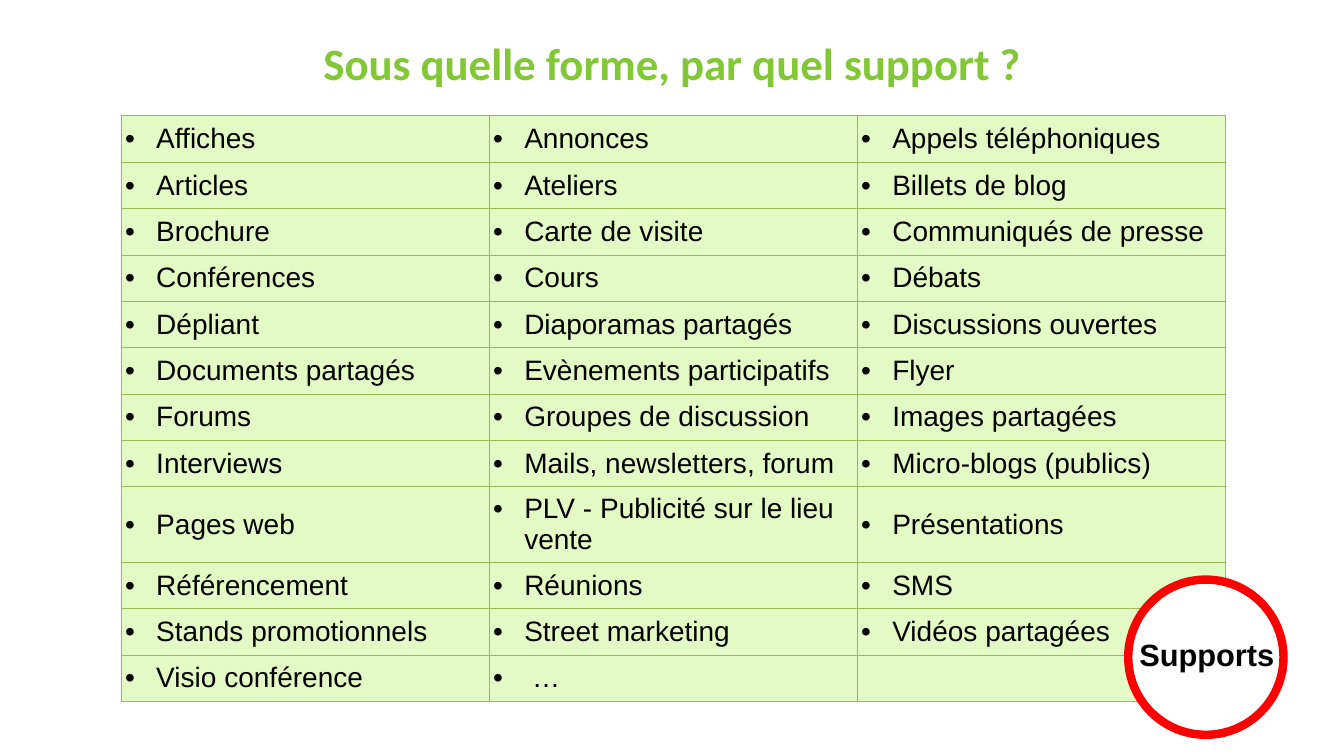
from lxml import etree
from pptx import Presentation
from pptx.dml.color import RGBColor
from pptx.enum import shapes, text
from pptx.oxml import ns
from pptx.util import Inches, Pt

# Content
TITLE = "Sous quelle forme, par quel support ?"
BADGE = "Supports"
SUPPORTS = [
    ("Affiches", "Annonces", "Appels téléphoniques"),
    ("Articles", "Ateliers", "Billets de blog"),
    ("Brochure", "Carte de visite", "Communiqués de presse"),
    ("Conférences", "Cours", "Débats"),
    ("Dépliant", "Diaporamas partagés", "Discussions ouvertes"),
    ("Documents partagés", "Evènements participatifs", "Flyer"),
    ("Forums", "Groupes de discussion", "Images partagées"),
    ("Interviews", "Mails, newsletters, forum", "Micro-blogs (publics)"),
    ("Pages web", "PLV - Publicité sur le lieu vente", "Présentations"),
    ("Référencement", "Réunions", "SMS"),
    ("Stands promotionnels", "Street marketing", "Vidéos partagées"),
    ("Visio conférence", " …", ""),
]

# Colours and sizes
GREEN = RGBColor(0x82, 0xC8, 0x36)
PALE_GREEN = RGBColor(0xE2, 0xFA, 0xC3)
BORDER_GREEN = RGBColor(0x98, 0xB9, 0x55)
RED = RGBColor(0xFF, 0x00, 0x00)
WHITE = RGBColor(0xFF, 0xFF, 0xFF)
BLACK = RGBColor(0x00, 0x00, 0x00)
COLUMN_WIDTH, ROW_HEIGHT, TALL_ROW_HEIGHT = 3.65, 0.46, 0.75
TALL_ROW = 8
INDENT = Inches(0.31)


def add_child(parent, tag, **attributes):
    return etree.SubElement(parent, ns.qn(tag), attributes)


def set_font(paragraph, name, size, color, bold=False):
    font = paragraph.font
    font.name, font.size, font.bold = name, Pt(size), bold
    font.color.rgb = color


def add_label(slide, box, words, name, size, color, wrap):
    shape = slide.shapes.add_textbox(*map(Inches, box))
    frame = shape.text_frame
    frame.word_wrap = wrap
    frame.vertical_anchor = text.MSO_ANCHOR.MIDDLE
    paragraph = frame.paragraphs[0]
    paragraph.text = words
    paragraph.alignment = text.PP_ALIGN.CENTER
    set_font(paragraph, name, size, color, bold=True)


def add_borders(cell):
    properties = cell._tc.get_or_add_tcPr()
    for side in ("a:lnL", "a:lnR", "a:lnT", "a:lnB"):
        line = add_child(properties, side, w=str(Pt(0.75)))
        fill = add_child(line, "a:solidFill")
        add_child(fill, "a:srgbClr", val=str(BORDER_GREEN))


def fill_cell(cell, words):
    add_borders(cell)
    cell.fill.solid()
    cell.fill.fore_color.rgb = PALE_GREEN
    cell.vertical_anchor = text.MSO_ANCHOR.MIDDLE
    cell.margin_left = Inches(0.04)
    cell.margin_right = cell.margin_top = cell.margin_bottom = Inches(0.01)
    paragraph = cell.text_frame.paragraphs[0]
    if words:
        paragraph.text = words
        properties = paragraph._p.get_or_add_pPr()
        properties.set("marL", str(INDENT))
        properties.set("indent", str(-INDENT))
        add_child(properties, "a:buFont", typeface="Arial")
        add_child(properties, "a:buChar", char="•")
    set_font(paragraph, "Arial", 20, BLACK)


def add_supports_table(slide):
    heights = [TALL_ROW_HEIGHT if i == TALL_ROW else ROW_HEIGHT
               for i in range(len(SUPPORTS))]
    columns = len(SUPPORTS[0])
    table = slide.shapes.add_table(
        len(SUPPORTS), columns, Inches(1.2), Inches(1.15),
        Inches(columns * COLUMN_WIDTH), Inches(sum(heights))).table
    table.first_row = table.horz_banding = False
    for column in table.columns:
        column.width = Inches(COLUMN_WIDTH)
    for row, height, entries in zip(table.rows, heights, SUPPORTS):
        row.height = Inches(height)
        for cell, words in zip(row.cells, entries):
            fill_cell(cell, words)


def add_badge(slide):
    circle = slide.shapes.add_shape(
        shapes.MSO_SHAPE.OVAL, Inches(11.19), Inches(5.75), Inches(1.54), Inches(1.54))
    circle.shadow.inherit = False
    circle.fill.solid()
    circle.fill.fore_color.rgb = WHITE
    circle.line.color.rgb = RED
    circle.line.width = Pt(6)
    add_label(slide, (11.19, 6.26, 1.56, 0.47), BADGE, "Arial", 22, BLACK, wrap=False)


def main():
    presentation = Presentation()
    presentation.slide_width = Inches(13.33)
    presentation.slide_height = Inches(7.5)
    slide = presentation.slides.add_slide(presentation.slide_layouts[6])
    add_label(slide, (0.67, 0.3, 12, 0.64), TITLE, "Calibri", 32, GREEN, wrap=True)
    add_supports_table(slide)
    add_badge(slide)
    presentation.save("out.pptx")


if __name__ == "__main__":
    main()
